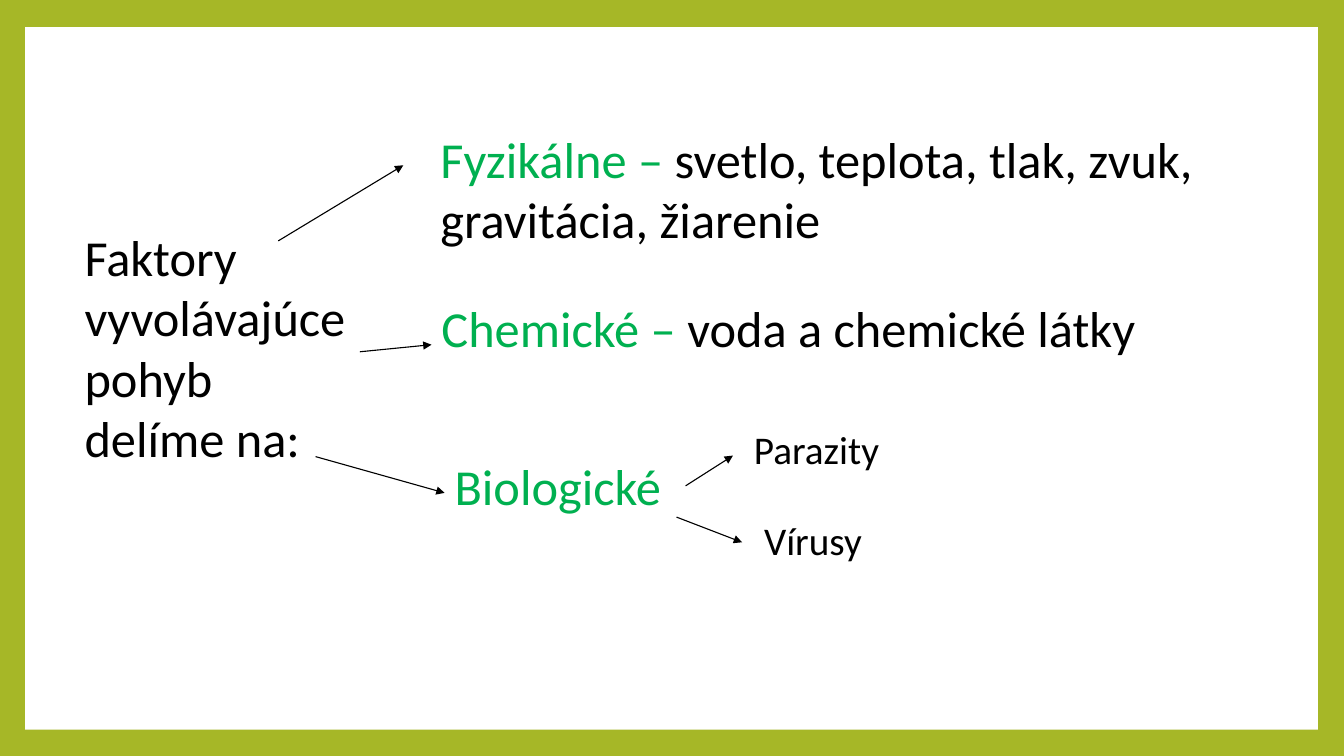
from lxml import etree
from pptx import Presentation
from pptx.dml.color import RGBColor
from pptx.enum import shapes, text
from pptx.oxml.ns import qn
from pptx.util import Inches, Pt

BLACK, GREEN, WHITE, OLIVE = "000000", "00B050", "FFFFFF", "A6B727"


def paint(fill, color):
    fill.solid()
    fill.fore_color.rgb = RGBColor.from_string(color)


prs = Presentation()
prs.slide_width, prs.slide_height = Inches(13.33), Inches(7.5)
slide = prs.slides.add_slide(prs.slide_layouts[6])

# Olive border around a white panel
paint(slide.background.fill, OLIVE)
panel = slide.shapes.add_shape(
    shapes.MSO_SHAPE.RECTANGLE, Inches(0.25), Inches(0.27), Inches(12.82), Inches(6.97))
panel.shadow.inherit = False
paint(panel.fill, WHITE)
panel.line.fill.background()

# Question, factors and biological examples: box, size, coloured runs
labels = [
    ((0.74, 2.19, 2.96, 2.89), 36, [("Faktory vyvolávajúce pohyb delíme na:", BLACK)]),
    ((4.27, 1.22, 8.07, 1.82), 36, [("Fyzikálne – ", GREEN),
                                    ("svetlo, teplota, tlak, zvuk, gravitácia, žiarenie", BLACK)]),
    ((4.28, 2.9, 8.07, 1.03), 36, [("Chemické – ", GREEN), ("voda a chemické látky", BLACK)]),
    ((4.41, 4.47, 2.71, 1.34), 36, [("Biologické", GREEN)]),
    ((7.38, 4.17, 3.1, 0.59), 28, [("Parazity", BLACK)]),
    ((7.48, 5.07, 2.9, 0.59), 28, [("Vírusy", BLACK)]),
]
for box, size, runs in labels:
    frame = slide.shapes.add_textbox(*map(Inches, box)).text_frame
    frame.word_wrap = True
    frame.vertical_anchor = text.MSO_ANCHOR.TOP
    for words, color in runs:
        run = frame.paragraphs[0].add_run()
        run.text = words
        run.font.name, run.font.size = "Calibri", Pt(size)
        paint(run.font.fill, color)

# Arrows from the question to the factors, then to the examples
arrows = [
    (2.76, 2.39, 4, 1.64),
    (3.57, 3.49, 4.28, 3.42),
    (3.13, 4.53, 4.41, 4.89),
    (6.8, 4.82, 7.27, 4.52),
    (6.71, 5.13, 7.36, 5.38),
]
for ends in arrows:
    arrow = slide.shapes.add_connector(shapes.MSO_CONNECTOR.STRAIGHT, *map(Inches, ends))
    paint(arrow.line.fill, BLACK)
    arrow.line.width = Pt(0.79)
    etree.SubElement(arrow.line._get_or_add_ln(), qn("a:tailEnd"), type="triangle")
    etree.SubElement(arrow._element.spPr, qn("a:effectLst"))

prs.save("out.pptx")
